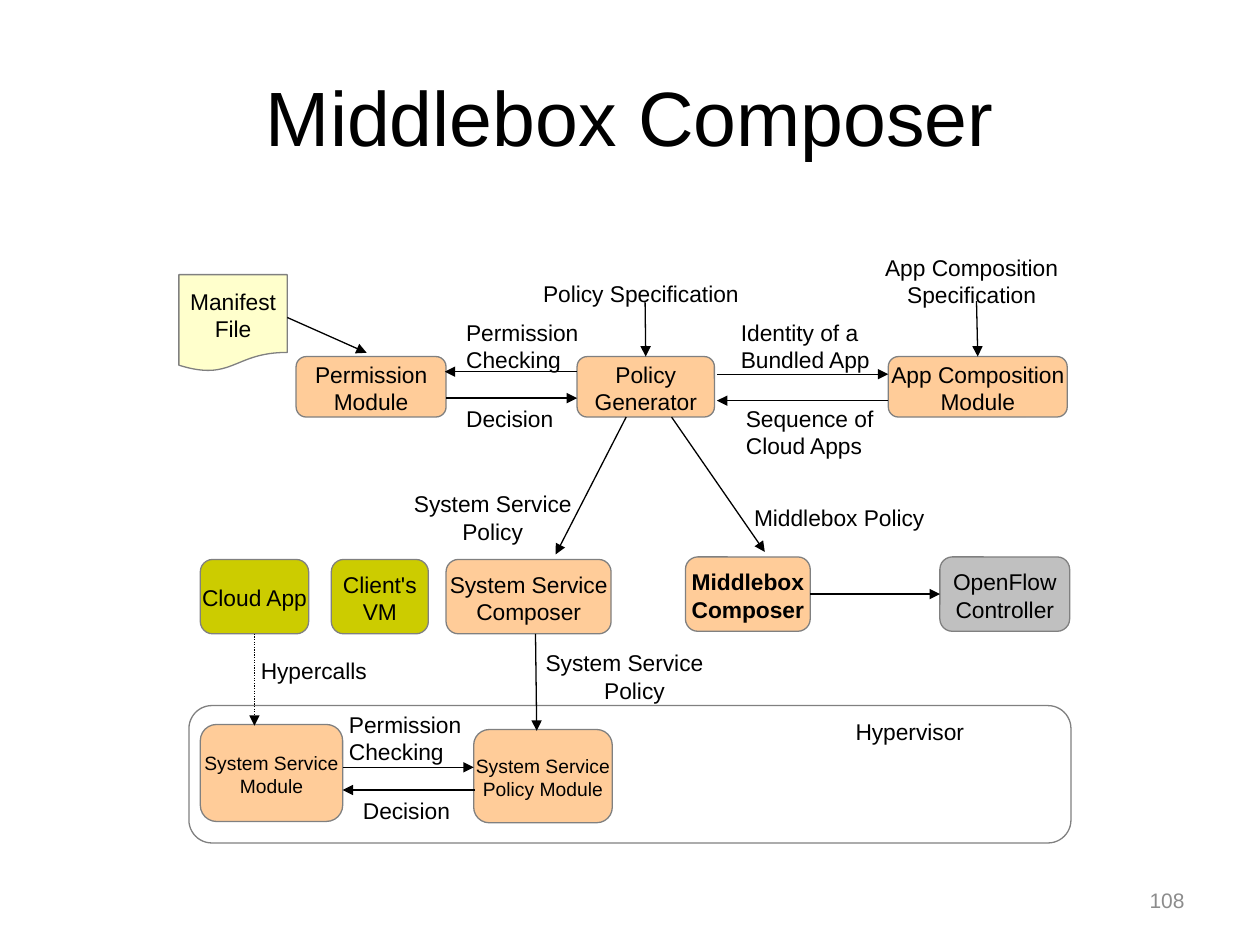
import pptx
import pptx.util
import pptx.dml.color
import pptx.enum.dml
import pptx.enum.shapes
import pptx.enum.text
import pptx.oxml
import pptx.oxml.ns

RGB = pptx.dml.color.RGBColor
SHAPE = pptx.enum.shapes.MSO_SHAPE
ALIGN = pptx.enum.text.PP_ALIGN
ANCHOR = pptx.enum.text.MSO_ANCHOR

BLACK = RGB(0x00, 0x00, 0x00)
GREY = RGB(0x80, 0x80, 0x80)
PAGE_GREY = RGB(0x8C, 0x8C, 0x8C)
SILVER = RGB(0xC0, 0xC0, 0xC0)
ORANGE = RGB(0xFF, 0xCC, 0x99)
OLIVE = RGB(0xCC, 0xCC, 0x00)
CREAM = RGB(0xFF, 0xFF, 0xCC)

COLS, ROWS = 100, 75
LEFT, CENTER, RIGHT = ALIGN.LEFT, ALIGN.CENTER, ALIGN.RIGHT
INSETS = {"margin_left": 0.09, "margin_top": 0.06, "margin_right": 0.09, "margin_bottom": 0.04}
TITLE_INSETS = {"margin_left": 0.1, "margin_top": 0.04, "margin_right": 0.1, "margin_bottom": 0.05}

TITLE = ("Middlebox Composer", (5, 3, 90, 12.5))
PAGE = ("108", (71.7, 69.5, 23.3, 4))
FRAME = (15, 56, 70, 10.9)

BOXES = {
    "manifest": ("Manifest\nFile", (14.2, 21.8, 8.6, 7.7), CREAM, {}),
    "permission": ("Permission\nModule", (23.5, 28.3, 11.9, 4.8), ORANGE, {}),
    "generator": ("Policy\nGenerator", (45.8, 28.3, 10.9, 4.8), ORANGE, {}),
    "composition": ("App Composition\nModule", (70.5, 28.3, 14.2, 4.8), ORANGE, {}),
    "cloud": ("Cloud App", (15.9, 44.4, 8.6, 5.9), OLIVE, {}),
    "client": ("Client's\nVM", (26.3, 44.4, 7.7, 5.9), OLIVE, {}),
    "service": ("System Service\nComposer", (35.4, 44.4, 13.1, 5.9), ORANGE, {}),
    "middlebox": ("Middlebox\nComposer", (54.4, 44.2, 9.9, 5.9), ORANGE, {"bold": True}),
    "openflow": ("OpenFlow\nController", (74.6, 44.2, 10.3, 5.9), SILVER, {}),
    "module": ("System Service\nModule", (15.9, 57.5, 11.3, 7.7), ORANGE, {"size": 11}),
    "policy": ("System Service\nPolicy Module", (37.6, 57.9, 11, 7.4), ORANGE, {"size": 11}),
}

LABELS = [
    ("Policy Specification", (42.2, 21.6, 17.8, 2.9), [LEFT]),
    ("App Composition Specification", (68.2, 19.5, 17.8, 4.9), [CENTER]),
    ("Permission Checking", (36.1, 24.7, 12.3, 5.3), [LEFT]),
    ("Decision", (36.1, 31.5, 12.3, 5.3), [LEFT]),
    ("Identity of a\nBundled App", (57.9, 24.7, 12.3, 5.3), [LEFT, LEFT]),
    ("Sequence of\nCloud Apps", (58.3, 31.5, 12.3, 5.3), [LEFT, LEFT]),
    ("System Service Policy", (31.4, 38.3, 15.4, 4.9), [CENTER]),
    ("Middlebox Policy", (58.9, 39.4, 15.4, 4.5), [CENTER]),
    ("Hypercalls", (19.8, 51.5, 10.4, 2.9), [LEFT]),
    ("System Service\nPolicy", (42.4, 50.9, 15.9, 4.9), [LEFT, CENTER]),
    ("Permission Checking", (26.8, 55.8, 12.3, 5.3), [LEFT]),
    ("Decision", (27.9, 62.6, 12.3, 5.3), [LEFT]),
    ("Hypervisor", (67, 56.4, 10.6, 2.9), [LEFT]),
]

TOP, LEFT_SIDE, BOTTOM, RIGHT_SIDE = range(4)
ARROWS = [
    ((22.8, 25.2), (29.1, 28)),
    ((51.2, 23.9), ("generator", TOP)),
    ((77.5, 23.9), ("composition", TOP)),
    ((45.8, 29.5), (35.3, 29.5)),
    ((35.4, 31.6), (45.8, 31.6)),
    ((56.9, 29.7), (70.5, 29.7)),
    ((70.5, 31.8), (56.9, 31.8)),
    ((49.7, 33.1), (44.1, 44)),
    ((53.3, 33.1), (60.7, 43.8)),
    (("middlebox", RIGHT_SIDE), ("openflow", LEFT_SIDE)),
    ((42.5, 50.3), (42.6, 58)),
    ((27.2, 60.9), (37.6, 60.9)),
    ((37.7, 62.7), (27.2, 62.7)),
]
DOTTED_ARROW = (("cloud", BOTTOM), (20.2, 57.6))

prs = pptx.Presentation()
prs.slide_width, prs.slide_height = pptx.util.Inches(10), pptx.util.Inches(7.5)
s = prs.slides.add_slide(prs.slide_layouts[5])


def grid(*values):
    units = (prs.slide_width / COLS, prs.slide_height / ROWS)
    return [round(v * units[i % 2]) for i, v in enumerate(values)]


def write(sp, text, aligns, insets=INSETS, wrap=True, anchor=ANCHOR.TOP, size=13, color=BLACK, bold=False):
    tf = sp.text_frame
    tf.text = text
    tf.word_wrap, tf.vertical_anchor = wrap, anchor
    for name, value in insets.items():
        setattr(tf, name, pptx.util.Inches(value))
    for p, align in zip(tf.paragraphs, aligns):
        p.alignment = align
        for r in p.runs:
            for name, value in {"name": "Arial", "size": pptx.util.Pt(size), "bold": bold}.items():
                setattr(r.font, name, value)
            r.font.color.rgb = color


def add_box(kind, place, fill=None):
    sp = s.shapes.add_shape(kind, *grid(*place))
    sp.shadow.inherit = False
    if fill is None:
        sp.fill.background()
    else:
        sp.fill.solid()
        sp.fill.fore_color.rgb = fill
    sp.line.color.rgb = GREY
    sp.line.width = pptx.util.Pt(0.75)
    return sp


def add_arrow(start, end):
    joined = [isinstance(point[0], str) for point in (start, end)]
    free = [(0, 0) if j else grid(*point) for j, point in zip(joined, (start, end))]
    c = s.shapes.add_connector(pptx.enum.shapes.MSO_CONNECTOR.STRAIGHT, *free[0], *free[1])
    for is_joined, point, connect in zip(joined, (start, end), (c.begin_connect, c.end_connect)):
        if is_joined:
            connect(boxes[point[0]], point[1])
    c.line.color.rgb = BLACK
    c.line.width = pptx.util.Pt(0.75)
    tail = pptx.oxml.parse_xml(f'<a:tailEnd {pptx.oxml.ns.nsdecls("a")} type="triangle"/>')
    c.line._get_or_add_ln().append(tail)
    c._element.spPr.append(pptx.oxml.parse_xml(f'<a:effectLst {pptx.oxml.ns.nsdecls("a")}/>'))
    return c


title = s.shapes.title
title.left, title.top, title.width, title.height = grid(*TITLE[1])
write(title, TITLE[0], [CENTER], TITLE_INSETS, anchor=ANCHOR.MIDDLE, size=44)

add_box(SHAPE.ROUNDED_RECTANGLE, FRAME)

boxes = {}
for key, (text, place, fill, style) in BOXES.items():
    kind = SHAPE.FLOWCHART_DOCUMENT if key == "manifest" else SHAPE.ROUNDED_RECTANGLE
    boxes[key] = add_box(kind, place, fill)
    write(boxes[key], text, [CENTER, CENTER], wrap=False, anchor=ANCHOR.MIDDLE, **style)

for text, place, aligns in LABELS:
    write(s.shapes.add_textbox(*grid(*place)), text, aligns)

for start, end in ARROWS:
    add_arrow(start, end)
add_arrow(*DOTTED_ARROW).line.dash_style = pptx.enum.dml.MSO_LINE.ROUND_DOT

page = s.shapes.add_textbox(*grid(*PAGE[1]))
write(page, PAGE[0], [RIGHT], TITLE_INSETS, anchor=ANCHOR.MIDDLE, size=12, color=PAGE_GREY)

prs.save("out.pptx")
